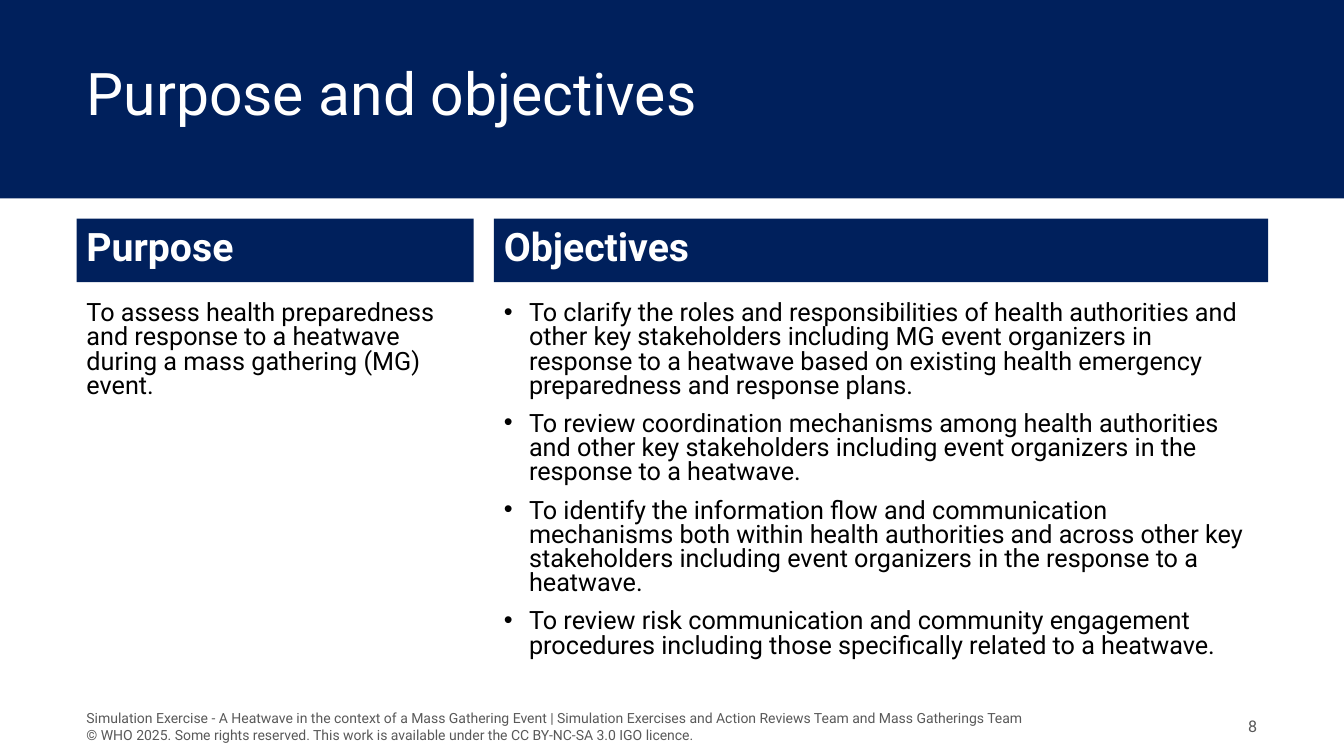
from lxml.etree import SubElement
from pptx import Presentation
from pptx.dml.color import RGBColor
from pptx.enum.shapes import MSO_SHAPE as Preset
from pptx.enum.text import MSO_ANCHOR as Anchor, MSO_AUTO_SIZE as AutoSize, PP_ALIGN as Align
from pptx.oxml.ns import qn
from pptx.util import Pt

COLORS = {"navy": "00205C", "white": "FFFFFF", "black": "000000", "grey": "595959"}
FONT = "Roboto"
TITLE_ONLY = 5

LEFT = 54.7
PURPOSE_WIDTH = 283.7
OBJECTIVES_LEFT, OBJECTIVES_WIDTH = 352.8, 553
HEADING_TOP, HEADING_HEIGHT = 156.2, 45.4
BODY_TOP, BODY_HEIGHT = 212.4, 283.7
FOOTER_TOP, FOOTER_HEIGHT = 506.2, 25.2
FOOTER_WIDTH, NUMBER_WIDTH = 779.8, 70.6

PURPOSE = ["To assess health preparedness and response to a heatwave during a mass gathering (MG) event."]
OBJECTIVES = [
    "To clarify the roles and responsibilities of health authorities and other key stakeholders "
    "including MG event organizers in response to a heatwave based on existing health emergency "
    "preparedness and response plans.",
    "To review coordination mechanisms among health authorities and other key stakeholders "
    "including event organizers in the response to a heatwave.",
    "To identify the information flow and communication mechanisms both within health authorities "
    "and across other key stakeholders including event organizers in the response to a heatwave.",
    "To review risk communication and community engagement procedures including those specifically "
    "related to a heatwave.",
]
FOOTER = (
    "Simulation Exercise - A Heatwave in the context of a Mass Gathering Event | "
    "Simulation Exercises and Action Reviews Team and Mass Gatherings Team\v"
    "© WHO 2025. Some rights reserved. This work is available under the CC BY-NC-SA 3.0 IGO licence."
)


def add_bullet(paragraph, indent=18):
    properties = paragraph._p.get_or_add_pPr()
    properties.set("marL", str(Pt(indent)))
    properties.set("indent", str(-Pt(indent)))
    SubElement(properties, qn("a:buFont")).set("typeface", "Arial")
    SubElement(properties, qn("a:buChar")).set("char", "•")


class SlideBuilder:
    def __init__(self, slide):
        self.slide = slide

    def set_lines(self, shape, lines, size, color, bold=False, bullets=False, spacing=0.8,
                  anchor=Anchor.MIDDLE, align=Align.LEFT, inset=3.6):
        """Fill a shape with paragraphs in the slide's text style."""
        frame = shape.text_frame
        frame.word_wrap = True
        frame.auto_size = AutoSize.NONE
        frame.vertical_anchor = anchor
        frame.margin_left = frame.margin_right = Pt(7.2)
        frame.margin_top = frame.margin_bottom = Pt(inset)
        for index, line in enumerate(lines):
            paragraph = frame.add_paragraph() if index else frame.paragraphs[0]
            paragraph.text = line
            if bullets:
                add_bullet(paragraph)
            paragraph.alignment = align
            paragraph.line_spacing = spacing
            paragraph.space_before = Pt(10 if index else 0)
            for run in paragraph.runs:
                run.font.name = FONT
                run.font.size = Pt(size)
                run.font.bold = bold
                run.font.color.rgb = RGBColor.from_string(COLORS[color])

    def block(self, left, top, width, height):
        block = self.slide.shapes.add_shape(Preset.RECTANGLE, Pt(left), Pt(top), Pt(width), Pt(height))
        block.shadow.inherit = False
        block.fill.solid()
        block.fill.fore_color.rgb = RGBColor.from_string(COLORS["navy"])
        block.line.fill.background()
        return block

    def text(self, left, top, width, height, lines, size, color, **style):
        box = self.slide.shapes.add_textbox(Pt(left), Pt(top), Pt(width), Pt(height))
        self.set_lines(box, lines, size, color, **style)

    def title(self, left, top, width, height, wording):
        """Place the title in front of everything drawn so far."""
        title = self.slide.shapes.title
        title.left, title.top, title.width, title.height = Pt(left), Pt(top), Pt(width), Pt(height)
        self.set_lines(title, [wording], 42, "white", inset=0)
        self.slide.shapes._spTree.append(title._element)

    def column(self, left, width, heading, lines, bullets=False):
        """Draw a filled heading with its body text below."""
        header = self.block(left, HEADING_TOP, width, HEADING_HEIGHT)
        self.set_lines(header, [heading], 28, "white", bold=True)
        self.text(left, BODY_TOP, width, BODY_HEIGHT, lines, 18, "black",
                  bullets=bullets, anchor=Anchor.TOP)


def main():
    deck = Presentation()
    deck.slide_width, deck.slide_height = Pt(960), Pt(540)
    page = SlideBuilder(deck.slides.add_slide(deck.slide_layouts[TITLE_ONLY]))

    page.block(0, 0, 960, 141.8)
    page.title(LEFT, 28.1, 708.5, 85, "Purpose and objectives")
    page.column(LEFT, PURPOSE_WIDTH, "Purpose", PURPOSE)
    page.column(OBJECTIVES_LEFT, OBJECTIVES_WIDTH, "Objectives", OBJECTIVES, bullets=True)
    page.text(LEFT, FOOTER_TOP, FOOTER_WIDTH, FOOTER_HEIGHT, [FOOTER], 10, "grey", spacing=1.0)
    page.text(LEFT + FOOTER_WIDTH, FOOTER_TOP, NUMBER_WIDTH, FOOTER_HEIGHT, ["8"], 11.5, "grey",
              spacing=1.0, align=Align.RIGHT)

    deck.save("out.pptx")


if __name__ == "__main__":
    main()
